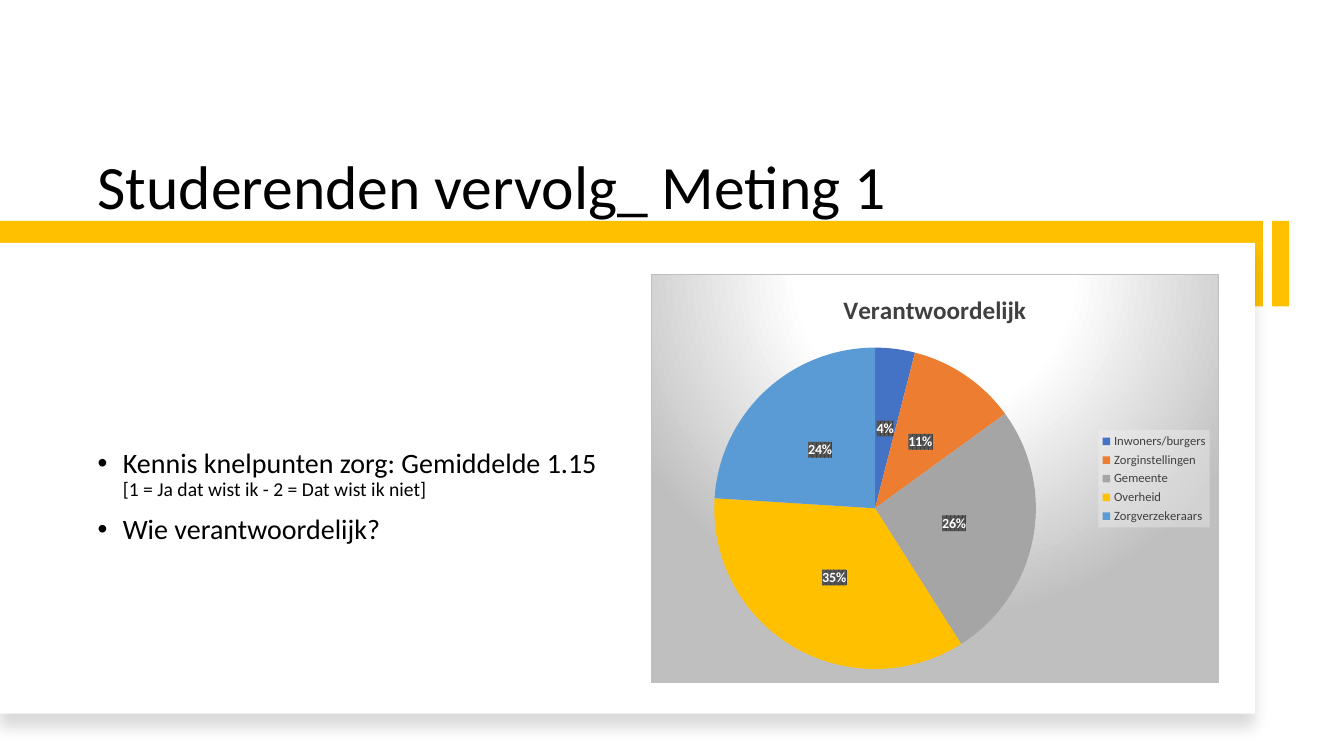
from dataclasses import dataclass

from pptx import Presentation, util as u
from pptx.chart import data
from pptx.dml import color
from pptx.enum import chart as ch, shapes, text
from pptx.oxml import ns, parse_xml

Pt = u.Pt
RGB = color.RGBColor.from_string


@dataclass(frozen=True)
class Theme:
    font: str = "Calibri"
    ink: str = "000000"
    paper: str = "FFFFFF"
    accent: str = "FFC000"
    chart_ink: str = "404040"
    label_back: str = "595959"
    legend_back: str = "F2F2F2"
    chart_edge: str = "BFBFBF"
    title: float = 44
    body: float = 20
    note: float = 14
    chart_title: float = 18
    label: float = 10
    legend: float = 9


@dataclass(frozen=True)
class Box:
    left: float
    top: float
    width: float
    height: float

    def lengths(self) -> list:
        return [Pt(v) for v in (self.left, self.top, self.width, self.height)]


@dataclass(frozen=True)
class Panel:
    box: Box
    fill: str
    shadow: bool = False


@dataclass(frozen=True)
class Slice:
    name: str
    value: int
    fill: str


T = Theme()
TITLE_BOX = Box(62.64, 30.24, 792.72, 132.48)
BODY_BOX = Box(62.64, 212, 378, 286.56)
CHART_BOX = Box(465.12, 195.84, 405.36, 292.32)
PANELS = [
    Panel(Box(0, 157.68, 902.16, 61.2), T.accent),
    Panel(Box(0, 173.52, 896.4, 336.24), T.paper, shadow=True),
    Panel(Box(908.64, 157.68, 12.24, 61.2), T.accent),
]
BULLETS = [
    [("Kennis knelpunten zorg: Gemiddelde 1.15", T.body),
     ("[1 = Ja dat wist ik - 2 = Dat wist ik niet]", T.note)],
    [("Wie verantwoordelijk?", T.body)],
]
SLICES = [
    Slice("Inwoners/burgers", 4, "4472C4"),
    Slice("Zorginstellingen", 11, "ED7D31"),
    Slice("Gemeente", 26, "A5A5A5"),
    Slice("Overheid", 35, "FFC000"),
    Slice("Zorgverzekeraars", 24, "5B9BD5"),
]


def srgb(value: str, alpha: int = 100) -> str:
    return f'<a:srgbClr val="{value}"><a:alpha val="{alpha * 1000}"/></a:srgbClr>'


def set_font(font, size: float, ink: str, bold: bool = False) -> None:
    font.name, font.size, font.bold = T.font, Pt(size), bold
    font.color.rgb = RGB(ink)


def add_panel(s, panel: Panel) -> None:
    sp = s.shapes.add_shape(shapes.MSO_SHAPE.RECTANGLE, *panel.box.lengths())
    sp.fill.solid()
    sp.fill.fore_color.rgb = RGB(panel.fill)
    sp.line.fill.background()
    sp.shadow.inherit = False
    if panel.shadow:
        sp._element.spPr.find(ns.qn("a:effectLst")).append(parse_xml(
            f'<a:outerShdw {ns.nsdecls("a")} blurRad="{Pt(11)}" dist="{Pt(10)}" '
            f'dir="5400000" algn="t" rotWithShape="0">{srgb(T.ink, 15)}</a:outerShdw>'))


def add_text_frame(s, box: Box, anchor: text.MSO_ANCHOR):
    tf = s.shapes.add_textbox(*box.lengths()).text_frame
    tf.word_wrap = True
    tf.vertical_anchor = anchor
    return tf


def add_title(s) -> None:
    tf = add_text_frame(s, TITLE_BOX, text.MSO_ANCHOR.BOTTOM)
    tf.text = "Studerenden vervolg_ Meting 1"
    p = tf.paragraphs[0]
    p.line_spacing = 0.9
    set_font(p.runs[0].font, T.title, T.ink)


def add_bullets(s) -> None:
    tf = add_text_frame(s, BODY_BOX, text.MSO_ANCHOR.MIDDLE)
    for i, lines in enumerate(BULLETS):
        p = tf.add_paragraph() if i else tf.paragraphs[0]
        p.text = "\v".join(words for words, _ in lines)
        pPr = p._p.get_or_add_pPr()
        pPr.set("marL", str(Pt(18)))
        pPr.set("indent", str(-Pt(18)))
        pPr.append(parse_xml(f'<a:buFont {ns.nsdecls("a")} typeface="Arial"/>'))
        pPr.append(parse_xml(f'<a:buChar {ns.nsdecls("a")} char="•"/>'))
        p.line_spacing = 0.9
        if i:
            p.space_before = Pt(10)
        for r, (_, size) in zip(p.runs, lines):
            set_font(r.font, size, T.ink)


def set_back(element, fill: str) -> None:
    """Put shape properties before the text properties of a chart part."""
    element.find(ns.qn("c:txPr")).addprevious(
        parse_xml(f'<c:spPr {ns.nsdecls("c", "a")}>{fill}</c:spPr>'))


def add_pie(s) -> None:
    cd = data.CategoryChartData()
    cd.categories = [part.name for part in SLICES]
    cd.add_series("Verantwoordelijk", [part.value for part in SLICES])
    chart = s.shapes.add_chart(ch.XL_CHART_TYPE.PIE, *CHART_BOX.lengths(), cd).chart
    set_font(chart.font, T.label, T.ink)
    stops = "".join(f'<a:gs pos="{pos * 1000}">{srgb(fill)}</a:gs>' for pos, fill in
                    [(0, T.paper), (39, T.paper), (100, T.chart_edge)])
    set_back(chart._chartSpace,
             f'<a:gradFill><a:gsLst>{stops}</a:gsLst><a:path path="circle">'
             '<a:fillToRect l="50000" t="-80000" r="50000" b="180000"/></a:path></a:gradFill>'
             f'<a:ln w="{Pt(0.75)}"><a:solidFill>{srgb(T.chart_edge)}</a:solidFill></a:ln>')

    tf = chart.chart_title.text_frame
    tf.text = "Verantwoordelijk"
    set_font(tf.paragraphs[0].runs[0].font, T.chart_title, T.chart_ink, bold=True)
    chart.chart_title.include_in_layout = False

    chart.has_legend = True
    legend = chart.legend
    legend.position = ch.XL_LEGEND_POSITION.RIGHT
    legend.include_in_layout = False
    set_font(legend.font, T.legend, T.chart_ink)
    set_back(legend._element, f'<a:solidFill>{srgb(T.legend_back, 39)}</a:solidFill>')

    plot = chart.plots[0]
    plot.vary_by_categories = True
    for i, part in enumerate(SLICES):
        fill = plot.series[0].points[i].format.fill
        fill.solid()
        fill.fore_color.rgb = RGB(part.fill)

    labels = plot.series[0].data_labels
    labels.show_percentage = True
    labels.show_value = False
    labels.number_format = "0%"
    labels.number_format_is_linked = False
    labels.position = ch.XL_LABEL_POSITION.CENTER
    set_font(labels.font, T.label, T.paper, bold=True)
    set_back(labels._element,
             f'<a:pattFill prst="pct75"><a:fgClr>{srgb(T.chart_ink)}</a:fgClr>'
             f'<a:bgClr>{srgb(T.label_back)}</a:bgClr></a:pattFill>')


def main() -> None:
    prs = Presentation()
    prs.slide_width, prs.slide_height = Pt(960), Pt(540)
    s = prs.slides.add_slide(prs.slide_layouts[6])
    add_title(s)
    for panel in PANELS:
        add_panel(s, panel)
    add_bullets(s)
    add_pie(s)
    prs.save("out.pptx")


if __name__ == "__main__":
    main()
